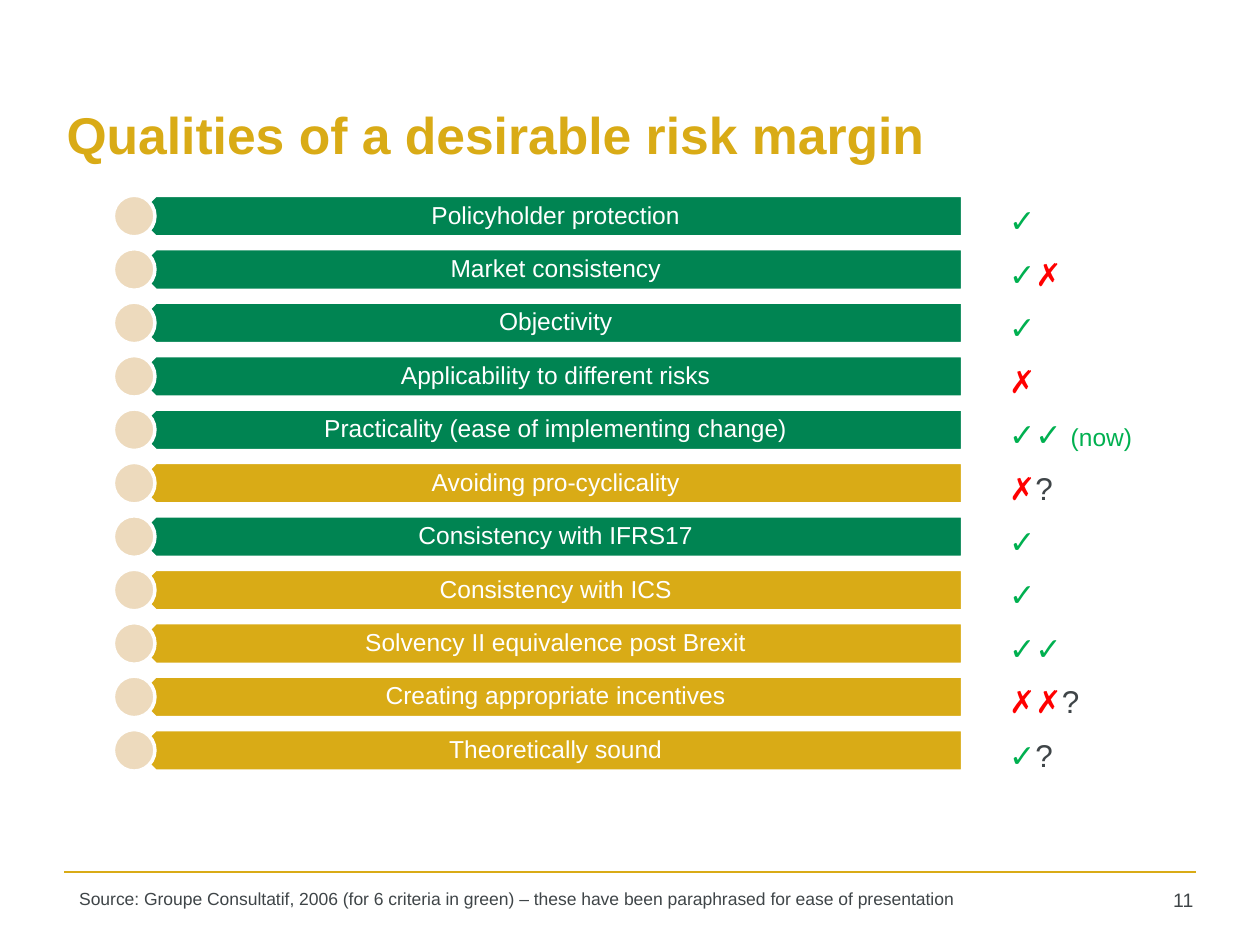
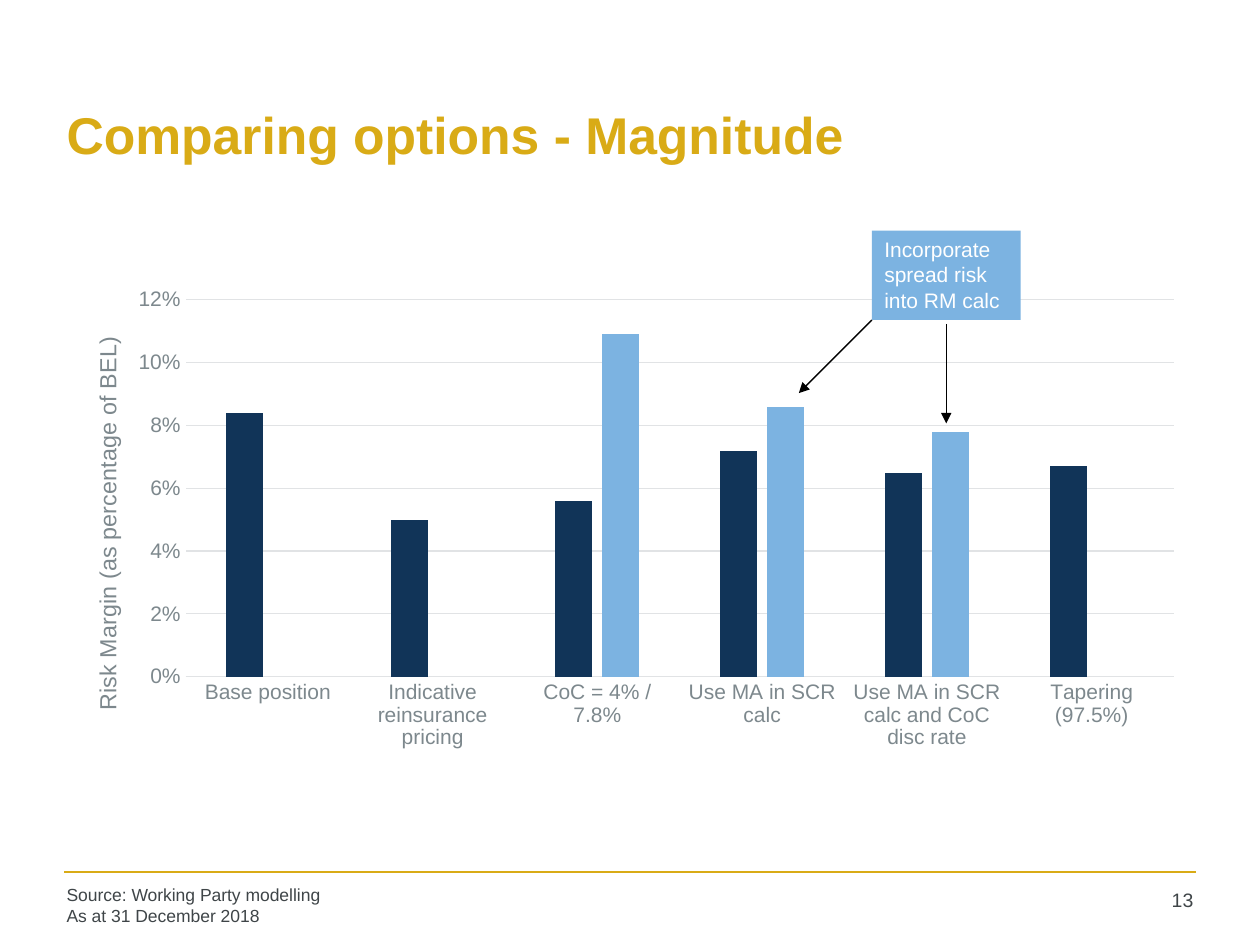
import pptx
import pptx.chart.data
import pptx.dml.color
import pptx.enum.chart
import pptx.enum.shapes
import pptx.enum.text
import pptx.oxml.ns
import pptx.oxml.xmlchemy
import pptx.util
from dataclasses import dataclass

Inches = pptx.util.Inches
Pt = pptx.util.Pt
Shape = pptx.enum.shapes.MSO_SHAPE
Align = pptx.enum.text.PP_ALIGN
Anchor = pptx.enum.text.MSO_ANCHOR
qn = pptx.oxml.ns.qn
new_element = pptx.oxml.xmlchemy.OxmlElement


@dataclass(frozen=True)
class Theme:
    font: str = "Arial"
    gold: str = "D9AB16"
    green: str = "008452"
    sand: str = "EDDABD"
    navy: str = "113458"
    sky: str = "7CB3E1"
    ink: str = "3F4548"
    axis: str = "7D888D"
    grid: str = "E1E3E5"
    tick: str = "00B050"
    cross: str = "FF0000"
    white: str = "FFFFFF"
    black: str = "000000"
    title_size: float = 29.5
    verdict_size: float = 18
    bar_size: float = 14
    axis_title_size: float = 13.3
    label_size: float = 12
    number_size: float = 11.1
    source_size: float = 10


def rgb(color):
    return pptx.dml.color.RGBColor.from_string(color)


class Deck:
    def __init__(self, theme):
        self.theme = theme
        self.presentation = pptx.Presentation()
        self.presentation.slide_width = Inches(10)
        self.presentation.slide_height = Inches(7.5)
        self.slide = None

    def style(self, font, size, color, bold=False):
        font.name = self.theme.font
        font.size = Pt(size)
        font.color.rgb = rgb(color)
        font.bold = bold

    def start(self, title, number):
        theme = self.theme
        self.slide = self.presentation.slides.add_slide(self.presentation.slide_layouts[6])
        self.line((0.51, 6.92), (9.49, 6.92), theme.gold, 1)
        self.text((0.43, 0.44, 9.07, 1.25), [title], theme.title_size, theme.gold,
                  anchor=Anchor.MIDDLE, bold=True)
        self.text((8.86, 7, 0.71, 0.37), [number], theme.number_size, theme.ink, Align.RIGHT)

    def fill_text(self, frame, lines, size, color, align=Align.LEFT, bold=False):
        frame.word_wrap = True
        frame.text = "\n".join(lines)
        for paragraph in frame.paragraphs:
            paragraph.alignment = align
            for run in paragraph.runs:
                self.style(run.font, size, color, bold)

    def text(self, box, lines, size, color, align=Align.LEFT, anchor=Anchor.TOP, bold=False):
        frame = self.slide.shapes.add_textbox(*map(Inches, box)).text_frame
        frame.vertical_anchor = anchor
        self.fill_text(frame, lines, size, color, align, bold)
        return frame

    def mixed_text(self, box, pieces):
        frame = self.slide.shapes.add_textbox(*map(Inches, box)).text_frame
        frame.word_wrap = True
        for words, color, size in pieces:
            run = frame.paragraphs[0].add_run()
            run.text = words
            self.style(run.font, size, color)

    def shape(self, kind, box, fill, outline=None):
        shape = self.slide.shapes.add_shape(kind, *map(Inches, box))
        shape.shadow.inherit = False
        shape.fill.solid()
        shape.fill.fore_color.rgb = rgb(fill)
        if outline:
            shape.line.color.rgb = rgb(outline)
            shape.line.width = Pt(2)
        else:
            shape.line.fill.background()
        return shape

    def line(self, start, end, color, width, arrow=False):
        connector = self.slide.shapes.add_connector(
            pptx.enum.shapes.MSO_CONNECTOR.STRAIGHT, *map(Inches, start + end))
        connector.line.color.rgb = rgb(color)
        connector.line.width = Pt(width)
        properties = connector._element.spPr
        if arrow:
            head = new_element("a:tailEnd")
            head.set("type", "triangle")
            properties.find(qn("a:ln")).append(head)
        properties.append(new_element("a:effectLst"))

    def criterion(self, top, label, color):
        theme = self.theme
        height = 0.33
        bar = self.shape(Shape.PENTAGON, (1.07, top, 6.57, height), color, theme.white)
        bar.rotation = 180
        frame = self.text((1.15, top, 6.49, height), [label], theme.bar_size, theme.white,
                          Align.CENTER, Anchor.MIDDLE)
        frame.margin_left, frame.margin_right = Inches(0.14), Inches(0.11)
        frame.margin_top = frame.margin_bottom = Inches(0.06)
        frame.paragraphs[0].line_spacing = 0.9
        self.shape(Shape.OVAL, (0.9, top, height, height), theme.sand, theme.white)

    def callout(self, box, words):
        theme = self.theme
        frame = self.shape(Shape.RECTANGLE, box, theme.sky).text_frame
        frame.vertical_anchor = Anchor.TOP
        self.fill_text(frame, [words], theme.label_size, theme.white)

    def layout(self, parent, position, **places):
        for old in parent.findall(qn("c:layout")):
            parent.remove(old)
        layout = new_element("c:layout")
        manual = new_element("c:manualLayout")
        layout.append(manual)
        for name, value in places.items():
            place = new_element(f"c:{name}")
            place.set("val", str(value))
            manual.append(place)
        parent.insert(position, layout)

    def column_chart(self, box, categories, series, axis_title):
        theme = self.theme
        data = pptx.chart.data.CategoryChartData(number_format="0%")
        data.categories = categories
        for name, values, _ in series:
            data.add_series(name, values)
        chart = self.slide.shapes.add_chart(
            pptx.enum.chart.XL_CHART_TYPE.COLUMN_CLUSTERED, *map(Inches, box), data).chart
        chart.has_legend = False
        chart.has_title = False
        self.style(chart.font, theme.source_size, theme.ink)

        plot = chart.plots[0]
        plot.gap_width = 219
        plot.overlap = -27
        plot.vary_by_categories = False
        for columns, (_, _, color) in zip(plot.series, series):
            columns.format.fill.solid()
            columns.format.fill.fore_color.rgb = rgb(color)

        categories_axis, values_axis = chart.category_axis, chart.value_axis
        for axis in (categories_axis, values_axis):
            axis.major_tick_mark = axis.minor_tick_mark = pptx.enum.chart.XL_TICK_MARK.NONE
            self.style(axis.tick_labels.font, theme.label_size, theme.axis)
        values_axis.minimum_scale = 0
        values_axis.maximum_scale = 0.12
        values_axis.major_unit = 0.02
        values_axis.tick_labels.number_format = "0%"
        values_axis.tick_labels.number_format_is_linked = False
        values_axis.format.line.fill.background()
        for rule in (categories_axis.format.line, values_axis.major_gridlines.format.line):
            rule.color.rgb = rgb(theme.grid)
            rule.width = Pt(0.75)

        heading = values_axis.axis_title
        heading.text_frame.text = axis_title
        self.style(heading.text_frame.paragraphs[0].runs[0].font,
                   theme.axis_title_size, theme.axis)
        body = heading._element.find(".//" + qn("a:bodyPr"))
        body.set("rot", "-5400000")
        body.set("vert", "horz")
        self.layout(heading._element, 1, xMode="edge", yMode="edge", x=0.03, y=0.11)
        self.layout(chart._chartSpace.find(".//" + qn("c:plotArea")), 0,
                    layoutTarget="inner", xMode="edge", yMode="edge",
                    x=0.115, y=0.042, w=0.865, h=0.785)


def qualities(deck):
    theme = deck.theme
    size = theme.verdict_size
    looks = {"✓": theme.tick, "✗": theme.cross, "?": theme.ink}
    criteria = [
        ("Policyholder protection", theme.green, "✓"),
        ("Market consistency", theme.green, "✓✗"),
        ("Objectivity", theme.green, "✓"),
        ("Applicability to different risks", theme.green, "✗"),
        ("Practicality (ease of implementing change)", theme.green, "✓✓"),
        ("Avoiding pro-cyclicality", theme.gold, "✗?"),
        ("Consistency with IFRS17", theme.green, "✓"),
        ("Consistency with ICS", theme.gold, "✓"),
        ("Solvency II equivalence post Brexit", theme.gold, "✓✓"),
        ("Creating appropriate incentives", theme.gold, "✗✗?"),
        ("Theoretically sound", theme.gold, "✓?"),
    ]
    remarks = {"Practicality (ease of implementing change)": "(now)"}
    deck.start("Qualities of a desirable risk margin", "11")
    for row, (label, color, marks) in enumerate(criteria):
        top = 1.55 + row * 0.424
        deck.criterion(top, label, color)
        verdict = [(mark, looks[mark], size) for mark in marks]
        if label in remarks:
            verdict += [(" ", theme.tick, size), (remarks[label], theme.tick, theme.bar_size)]
        deck.mixed_text((7.91, top, 1.42, 0.4), verdict)
    deck.text((0.53, 7, 8.35, 0.27),
              ["Source: Groupe Consultatif, 2006 (for 6 criteria in green) – "
               "these have been paraphrased for ease of presentation"],
              theme.source_size, theme.ink)


def magnitude(deck):
    theme = deck.theme
    deck.start("Comparing options - Magnitude", "13")
    deck.column_chart(
        (0.43, 2.22, 9.07, 3.81),
        ["Base position", "Indicative reinsurance pricing", "CoC = 4% / 7.8%",
         "Use MA in SCR calc", "Use MA in SCR calc and CoC disc rate", "Tapering (97.5%)"],
        [("Series 1", (0.084, 0.05, 0.056, 0.072, 0.065, 0.067), theme.navy),
         ("Series 2", (None, None, 0.109, 0.086, 0.078, None), theme.sky)],
        "Risk Margin (as percentage of BEL)")
    deck.callout((6.92, 1.83, 1.18, 0.71), "Incorporate spread risk into RM calc")
    for start, end in (((7.51, 2.57), (7.51, 3.36)), ((6.92, 2.54), (6.34, 3.12))):
        deck.line(start, end, theme.black, 0.75, arrow=True)
    deck.text((0.43, 6.97, 2.91, 0.44),
              ["Source: Working Party modelling", "As at 31 December 2018"],
              theme.source_size, theme.ink)


def main():
    deck = Deck(Theme())
    qualities(deck)
    magnitude(deck)
    deck.presentation.save("out.pptx")


if __name__ == "__main__":
    main()
